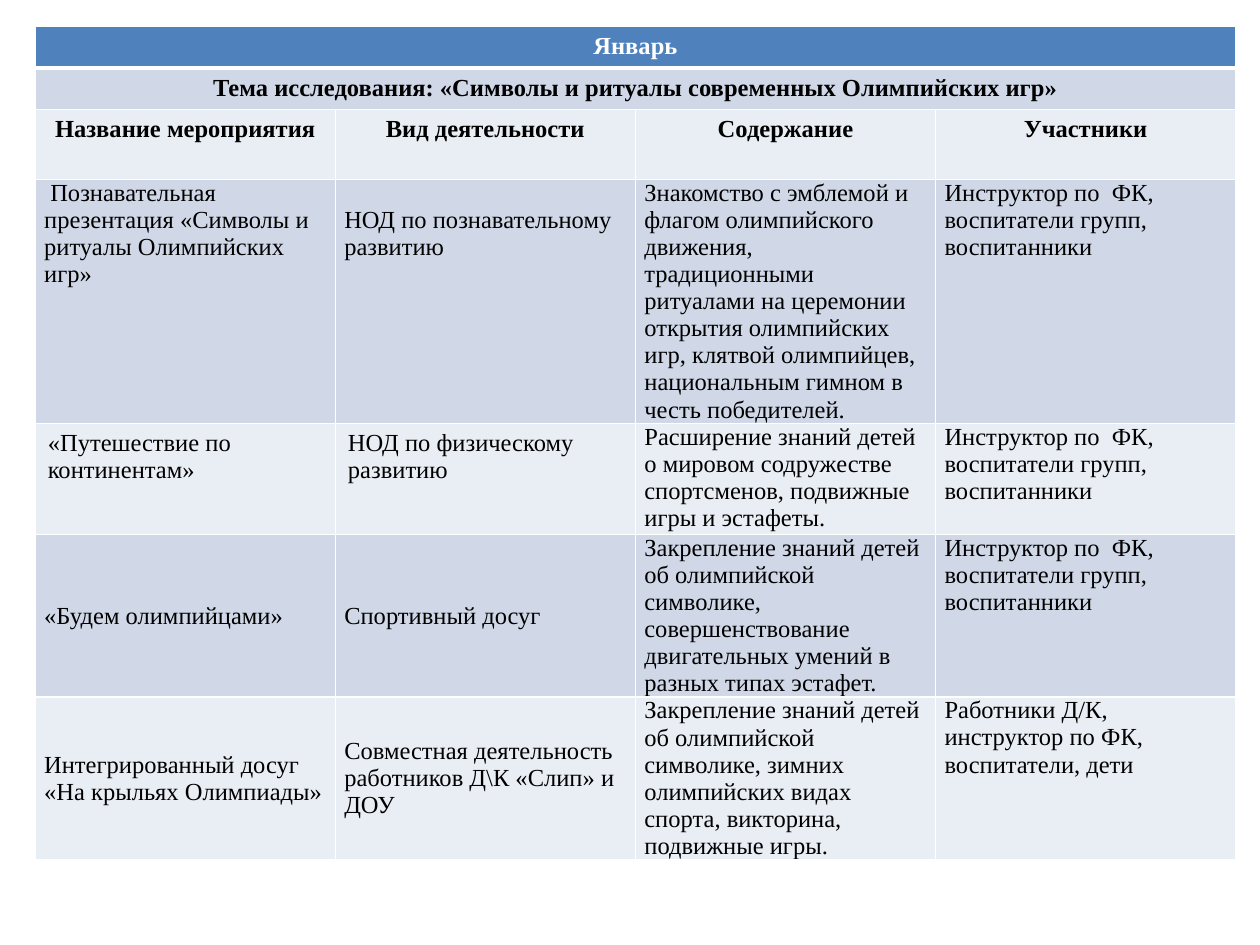
from dataclasses import dataclass

from lxml.etree import SubElement
from pptx import Presentation
from pptx.dml.color import RGBColor
from pptx.enum.text import MSO_ANCHOR, PP_ALIGN
from pptx.oxml.ns import qn
from pptx.util import Cm, Pt


@dataclass(frozen=True)
class Theme:
    font: str = "Times New Roman"
    size: int = 14
    ink: str = "000000"
    white: str = "FFFFFF"
    head: str = "4F81BD"
    dark: str = "D0D8E8"
    light: str = "E9EDF4"
    thin: int = 1
    thick: int = 3


def write(frame, text, font, size, color, bold=False, align=PP_ALIGN.LEFT):
    """Fill a text frame, one paragraph per line of text."""
    frame.text = text
    frame.word_wrap = True
    for para in frame.paragraphs:
        para.alignment = align
        for run in para.runs:
            run.font.name = font
            run.font.size = Pt(size)
            run.font.bold = bold
            run.font.color.rgb = RGBColor.from_string(color)


class Deck:
    def __init__(self, theme):
        self.theme = theme
        self.prs = Presentation()
        self.prs.slide_width, self.prs.slide_height = Cm(25.4), Cm(19.05)
        self.slide = self.prs.slides.add_slide(self.prs.slide_layouts[6])

    def table(self, left, top, widths, heights):
        shape = self.slide.shapes.add_table(
            len(heights), len(widths), Cm(left), Cm(top),
            Cm(sum(widths)), Cm(sum(heights)))
        grid = shape.table
        for col, width in zip(grid.columns, widths):
            col.width = Cm(width)
        for row, height in zip(grid.rows, heights):
            row.height = Cm(height)
        return grid

    def border(self, cell, **widths):
        props = cell._tc.get_or_add_tcPr()
        for side in "LRTB":
            width = widths.get(side, self.theme.thin)
            line = SubElement(props, qn(f"a:ln{side}"), w=str(Pt(width)))
            paint = SubElement(line, qn("a:solidFill"))
            SubElement(paint, qn("a:srgbClr"), val=self.theme.white)

    def cell(self, cell, text, fill, color=None, tight=False, drop=0,
             middle=False, edges=None, **style):
        theme = self.theme
        self.border(cell, **(edges or {}))
        cell.fill.solid()
        cell.fill.fore_color.rgb = RGBColor.from_string(fill)
        cell.vertical_anchor = MSO_ANCHOR.MIDDLE if middle else MSO_ANCHOR.TOP
        if tight:
            cell.margin_left = cell.margin_right = Cm(0.18)
            cell.margin_top, cell.margin_bottom = Cm(drop), Cm(0)
        write(cell.text_frame, text, theme.font, theme.size,
              color or theme.ink, **style)

    def save(self):
        self.prs.save("out.pptx")


HEADS = ["Название мероприятия", "Вид деятельности", "Содержание", "Участники"]
STAFF = "Инструктор по  ФК, воспитатели групп, воспитанники"
EVENTS = [
    [" Познавательная презентация «Символы и ритуалы Олимпийских игр»",
     "НОД по познавательному развитию",
     "Знакомство с эмблемой и флагом олимпийского движения, традиционными "
     "ритуалами на церемонии открытия олимпийских игр, клятвой олимпийцев, "
     "национальным гимном в честь победителей.",
     STAFF],
    ["«Путешествие по континентам»",
     "НОД по физическому развитию",
     "Расширение знаний детей о мировом содружестве спортсменов, "
     "подвижные игры и эстафеты.",
     STAFF],
    ["«Будем олимпийцами»",
     "Спортивный досуг",
     "Закрепление знаний детей об олимпийской символике, "
     "совершенствование двигательных умений в разных типах эстафет.",
     STAFF],
    ["Интегрированный досуг\n«На крыльях Олимпиады»",
     "Совместная деятельность работников Д\\К «Слип» и ДОУ",
     "Закрепление знаний детей об олимпийской символике, зимних "
     "олимпийских видах спорта, викторина, подвижные игры.",
     "Работники Д/К, инструктор по ФК, воспитатели, дети"],
]


def main():
    theme = Theme()
    deck = Deck(theme)
    grid = deck.table(0.71, 0.53, [6.05] * 4,
                      [0.84, 0.84, 1.41, 4.9, 2.24, 3.27, 3.27])
    title = dict(bold=True, align=PP_ALIGN.CENTER)

    # Month and topic bands across all columns
    bands = [
        ("Январь", theme.head, theme.white, "B"),
        ("Тема исследования: «Символы и ритуалы современных Олимпийских игр»",
         theme.dark, theme.ink, "T"),
    ]
    for row, (text, fill, color, side) in enumerate(bands):
        grid.cell(row, 0).merge(grid.cell(row, 3))
        for col in range(4):
            deck.cell(grid.cell(row, col), "" if col else text, fill, color,
                      edges={side: theme.thick}, **title)

    # Column heads
    for col, text in enumerate(HEADS):
        deck.cell(grid.cell(2, col), text, theme.light, **title)

    # Events, in alternating fills
    for num, event in enumerate(EVENTS):
        fill = theme.light if num % 2 else theme.dark
        for col, text in enumerate(event):
            deck.cell(grid.cell(num + 3, col), text, fill,
                      tight=num != 1 or col > 1,
                      drop=0.55 if (num, col) == (0, 1) else 0,
                      middle=num > 1 and col < 3)
    deck.save()


if __name__ == "__main__":
    main()
